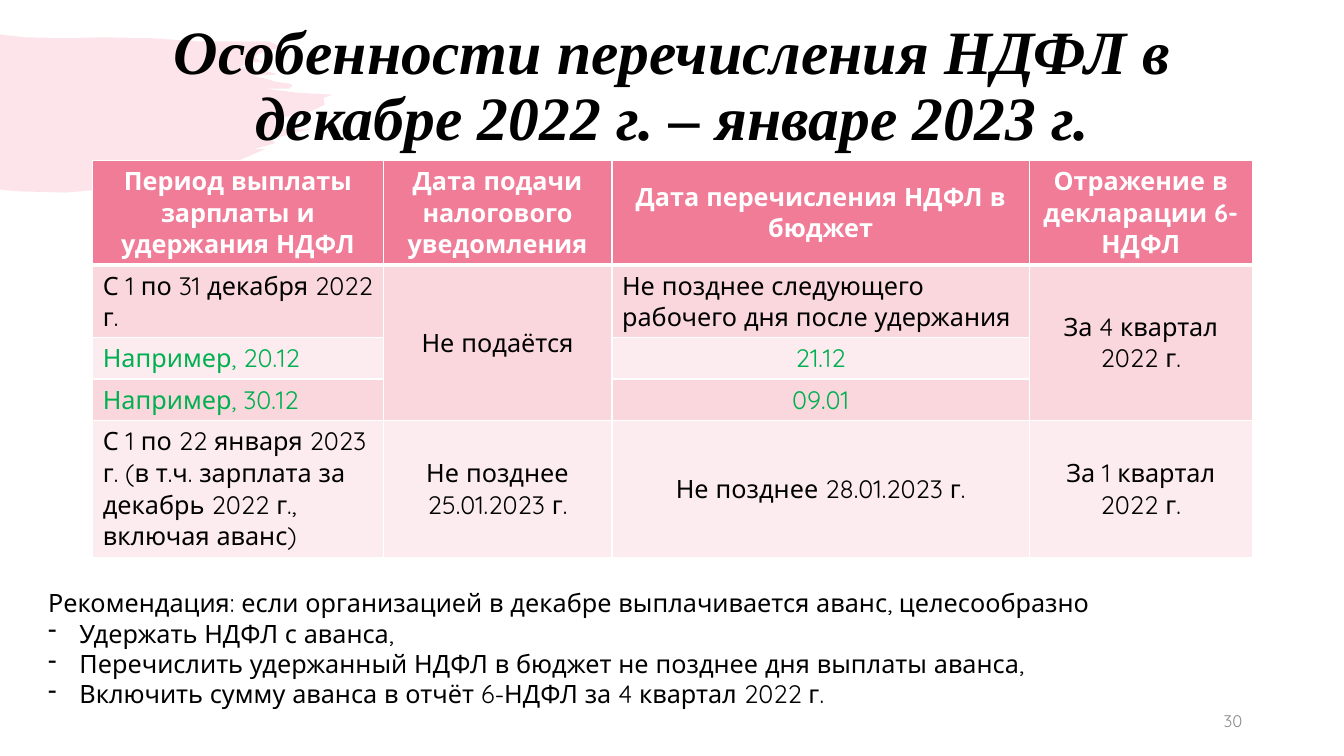
from dataclasses import dataclass

from lxml import etree
from pptx import Presentation
from pptx.dml.color import RGBColor
from pptx.enum.text import MSO_ANCHOR, PP_ALIGN
from pptx.oxml.ns import qn
from pptx.util import Emu, Pt

PX = 9144
LEFT, CENTER, RIGHT = PP_ALIGN.LEFT, PP_ALIGN.CENTER, PP_ALIGN.RIGHT
TOP, MIDDLE = MSO_ANCHOR.TOP, MSO_ANCHOR.MIDDLE


@dataclass(frozen=True)
class Theme:
    pink: str = "F07C98"
    band_dark: str = "F9D7DD"
    band_light: str = "FCECEF"
    white: str = "FFFFFF"
    black: str = "000000"
    green: str = "00B050"
    gray: str = "8C8C8C"
    title_font: str = "Times New Roman"
    body_font: str = "Quicksand"
    title_size: int = 44
    body_size: int = 18
    number_size: int = 12


T = Theme()


@dataclass(frozen=True)
class Style:
    size: int = T.body_size
    color: str = T.black
    font: str = T.body_font
    bold: bool = False
    italic: bool = False
    align: int = CENTER
    spacing: float = 1.0


@dataclass(frozen=True)
class Box:
    left: int
    top: int
    width: int
    height: int


@dataclass(frozen=True)
class Line:
    text: str
    style: Style
    bullet: bool = False


@dataclass(frozen=True)
class Cell:
    row: int
    col: int
    text: str
    style: Style
    rows: int = 1


TITLE = Style(T.title_size, T.black, T.title_font, True, True, CENTER, 0.9)
HEADER = Style(color=T.white, bold=True)
BODY = Style()
BODY_LEFT = Style(align=LEFT)
EXAMPLE = Style(color=T.green)
EXAMPLE_LEFT = Style(color=T.green, align=LEFT)
NUMBER = Style(T.number_size, T.gray, align=RIGHT)

BRUSH = [
    (0, 34), (6, 35), (25, 37), (66, 38), (102, 37), (151, 38), (194, 41),
    (248, 41), (266, 41), (280, 47), (271, 49), (255, 54), (253, 57), (256, 59),
    (262, 62), (250, 62), (238, 66), (246, 68), (256, 70), (266, 71), (275, 74),
    (251, 75), (263, 78), (273, 81), (280, 82), (288, 83), (290, 85), (287, 88),
    (284, 88), (263, 88), (295, 92), (330, 94), (321, 97), (322, 104), (318, 106),
    (307, 111), (300, 113), (283, 116), (280, 120), (278, 125), (274, 128),
    (308, 128), (269, 138), (273, 142), (252, 148), (263, 148), (235, 160),
    (197, 172), (102, 188), (65, 191), (23, 190), (7, 189), (0, 188),
]

HEADERS = [
    "Период выплаты зарплаты и удержания НДФЛ",
    "Дата подачи налогового уведомления",
    "Дата перечисления НДФЛ в бюджет",
    "Отражение в декларации 6-НДФЛ",
]
CELLS = [Cell(0, col, text, HEADER) for col, text in enumerate(HEADERS)] + [
    Cell(1, 0, "С 1 по 31 декабря 2022 г.", BODY_LEFT),
    Cell(1, 1, "Не подаётся", BODY, 3),
    Cell(1, 2, "Не позднее следующего рабочего дня после удержания", BODY_LEFT),
    Cell(1, 3, "За 4 квартал 2022 г.", BODY, 3),
    Cell(2, 0, "Например, 20.12", EXAMPLE_LEFT),
    Cell(2, 2, "21.12", EXAMPLE),
    Cell(3, 0, "Например, 30.12", EXAMPLE_LEFT),
    Cell(3, 2, "09.01", EXAMPLE),
    Cell(4, 0, "С 1 по 22 января 2023 г. (в т.ч. зарплата за декабрь 2022 г., "
               "включая аванс)", BODY_LEFT),
    Cell(4, 1, "Не позднее 25.01.2023 г.", BODY),
    Cell(4, 2, "Не позднее 28.01.2023 г.", BODY),
    Cell(4, 3, "За 1 квартал 2022 г.", BODY),
]
COLUMNS = [288, 227, 414, 221]
ROWS = [104, 72, 41, 41, 136]

ADVICE = [
    Line("Рекомендация: если организацией в декабре выплачивается аванс, "
         "целесообразно", BODY_LEFT),
    Line("Удержать НДФЛ с аванса,", BODY_LEFT, True),
    Line("Перечислить удержанный НДФЛ в бюджет не позднее дня выплаты аванса,",
         BODY_LEFT, True),
    Line("Включить сумму аванса в отчёт 6-НДФЛ за 4 квартал 2022 г.", BODY_LEFT, True),
]


def px(value: int) -> Emu:
    return Emu(value * PX)


def write(p, text: str, style: Style) -> None:
    p.alignment = style.align
    p.line_spacing = style.spacing
    r = p.add_run()
    r.text = text
    r.font.size = Pt(style.size)
    r.font.name = style.font
    r.font.bold = style.bold
    r.font.italic = style.italic
    r.font.color.rgb = RGBColor.from_string(style.color)


def add_bullet(p) -> None:
    pPr = p._p.get_or_add_pPr()
    pPr.set("marL", str(px(31)))
    pPr.set("indent", str(-px(31)))
    etree.SubElement(pPr, qn("a:buChar")).set("char", "-")


def add_text(s, box: Box, lines: list[Line], anchor: int) -> None:
    sp = s.shapes.add_textbox(px(box.left), px(box.top), px(box.width), px(box.height))
    tf = sp.text_frame
    tf.word_wrap = True
    tf.vertical_anchor = anchor
    for i, line in enumerate(lines):
        p = tf.add_paragraph() if i else tf.paragraphs[0]
        write(p, line.text, line.style)
        if line.bullet:
            add_bullet(p)


def add_brush(s) -> None:
    builder = s.shapes.build_freeform(*BRUSH[0], scale=PX)
    builder.add_line_segments(BRUSH[1:], close=True)
    sp = builder.convert_to_shape()
    sp.shadow.inherit = False
    sp.line.fill.background()
    sp.fill.solid()
    sp.fill.fore_color.rgb = RGBColor.from_string(T.pink)
    color = sp._element.spPr.find(qn("a:solidFill"))[0]
    etree.SubElement(color, qn("a:alpha")).set("val", "20000")


def add_borders(cell, top: int, bottom: int) -> None:
    tcPr = cell._tc.get_or_add_tcPr()
    for side, width in (("L", 1), ("R", 1), ("T", top), ("B", bottom)):
        ln = etree.SubElement(tcPr, qn(f"a:ln{side}"), w=str(Pt(width)))
        fill = etree.SubElement(ln, qn("a:solidFill"))
        etree.SubElement(fill, qn("a:srgbClr"), val=T.white)


def add_tax_table(s, left: int, top: int) -> None:
    table = s.shapes.add_table(len(ROWS), len(COLUMNS), px(left), px(top),
                               px(sum(COLUMNS)), px(sum(ROWS))).table
    table.horz_banding = False
    for column, width in zip(table.columns, COLUMNS):
        column.width = px(width)
    for i, (row, height) in enumerate(zip(table.rows, ROWS)):
        row.height = px(height)
        band = T.band_dark if i % 2 else T.band_light
        for cell in row.cells:
            add_borders(cell, 3 if i == 1 else 1, 1 if i else 3)
            cell.fill.solid()
            cell.fill.fore_color.rgb = RGBColor.from_string(band if i else T.pink)
    for item in CELLS:
        cell = table.cell(item.row, item.col)
        if item.rows > 1:
            cell.merge(table.cell(item.row + item.rows - 1, item.col))
        cell.vertical_anchor = MIDDLE
        write(cell.text_frame.paragraphs[0], item.text, item.style)


def main() -> None:
    prs = Presentation()
    prs.slide_width, prs.slide_height = px(1333), px(750)
    s = prs.slides.add_slide(prs.slide_layouts[6])
    add_brush(s)
    title = "Особенности перечисления НДФЛ в декабре 2022 г. – январе 2023 г."
    add_text(s, Box(92, 15, 1150, 144), [Line(title, TITLE)], MIDDLE)
    add_tax_table(s, 92, 159)
    add_text(s, Box(942, 695, 300, 40), [Line("30", NUMBER)], MIDDLE)
    add_text(s, Box(38, 578, 1170, 131), ADVICE, TOP)
    prs.save("out.pptx")


if __name__ == "__main__":
    main()
